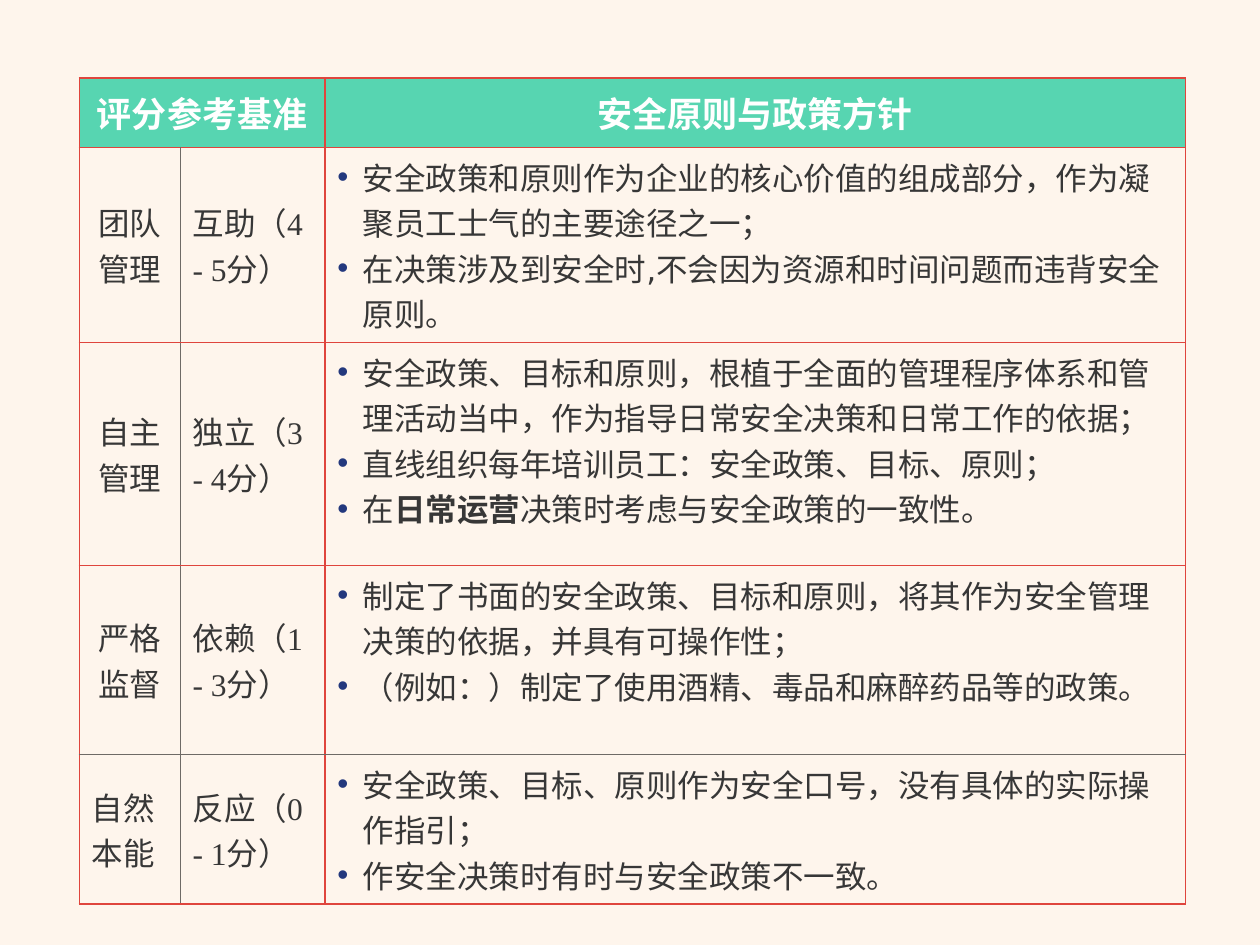
from lxml import etree
from pptx import Presentation
from pptx import util as u
from pptx.dml import color
from pptx.enum import text
from pptx.oxml import ns

BACKGROUND, GREEN, RED, GREY = "FEF5EC", "57D5B1", "DF453D", "6E6A66"
WHITE, INK, NAVY = "FFFFFF", "373737", "23387D"
SANS, SERIF, HAN = "DejaVu Sans", "Times New Roman", "Noto Sans CJK SC"
COLUMNS = [2.03, 2.92, 17.35]
ROWS = [1.4, 3.63, 4.5, 3.81, 2.79]
HEADINGS = {0: "评分参考基准", 2: "安全原则与政策方针"}
LEVELS = [
    ("团队管理", "互助（4 - 5分）", [
        ["安全政策和原则作为企业的核心价值的组成部分，作为凝聚员工士气的主要途径之一；"],
        ["在决策涉及到安全时,不会因为资源和时间问题而违背安全原则。"]]),
    ("自主管理", "独立（3 - 4分）", [
        ["安全政策、目标和原则，根植于全面的管理程序体系和管理活动当中，作为指导日常安全决策和日常工作的依据；"],
        ["直线组织每年培训员工：安全政策、目标、原则；"],
        ["在", "日常运营", "决策时考虑与安全政策的一致性。"]]),
    ("严格监督", "依赖（1 - 3分）", [
        ["制定了书面的安全政策、目标和原则，将其作为安全管理决策的依据，并具有可操作性；"],
        ["（例如：）制定了使用酒精、毒品和麻醉药品等的政策。"]]),
    ("自然本能", "反应（0 - 1分）", [
        ["安全政策、目标、原则作为安全口号，没有具体的实际操作指引；"],
        ["作安全决策时有时与安全政策不一致。"]]),
]


def paint(target, value):
    """Give a fill one solid colour."""
    target.solid()
    target.fore_color.rgb = color.RGBColor.from_string(value)


def add_child(parent, tag, **attributes):
    """Append a drawing element and return it."""
    return etree.SubElement(parent, ns.qn(tag), attributes)


def add_span(para, words, font, size=18, ink=INK, bold=False):
    """Add one run with its Latin and East Asian fonts."""
    span = para.add_run()
    span.text = words
    span.font.name, span.font.size, span.font.bold = font, u.Pt(size), bold
    paint(span.font.fill, ink)
    add_child(span.font._element, "a:ea", typeface=HAN)


def set_bullet(para):
    """Hang a paragraph behind a navy bullet."""
    properties = para._p.get_or_add_pPr()
    properties.set("marL", str(u.Cm(0.51)))
    properties.set("indent", str(u.Cm(-0.51)))
    add_child(add_child(properties, "a:buClr"), "a:srgbClr", val=NAVY)
    add_child(properties, "a:buFont", typeface="Arial")
    add_child(properties, "a:buChar", char="•")


def set_borders(cell, row, column):
    """Draw red cell borders, with thin grey ones inside the grid."""
    grey_sides = {
        "L": row > 0 and column == 1,
        "R": row > 0 and column == 0,
        "T": row == len(ROWS) - 1,
        "B": row == len(ROWS) - 2,
    }
    properties = cell._tc.get_or_add_tcPr()
    for side, grey in grey_sides.items():
        width = u.Pt(0.5 if grey else 1)
        line = add_child(properties, f"a:ln{side}", w=str(width))
        fill = add_child(line, "a:solidFill")
        add_child(fill, "a:srgbClr", val=GREY if grey else RED)


def fill_header(table):
    """Write the heading row."""
    table.cell(0, 0).merge(table.cell(0, 1))
    for column, words in HEADINGS.items():
        para = table.cell(0, column).text_frame.paragraphs[0]
        para.alignment = text.PP_ALIGN.CENTER
        add_span(para, words, HAN, 20, WHITE, True)


def fill_level(table, row, name, score, points):
    """Write one level: its name, its score and its bulleted points."""
    for column, words in enumerate((name, score)):
        para = table.cell(row, column).text_frame.paragraphs[0]
        centred = column == 0 and row < len(LEVELS)
        para.alignment = text.PP_ALIGN.CENTER if centred else text.PP_ALIGN.LEFT
        add_span(para, words, SERIF)
    frame = table.cell(row, 2).text_frame
    for index, spans in enumerate(points):
        para = frame.add_paragraph() if index else frame.paragraphs[0]
        set_bullet(para)
        for position, words in enumerate(spans):
            add_span(para, words, SANS, bold=position == 1)


def add_score_table(page, left, top):
    """Place the scoring table with its corner at the given point."""
    box = page.shapes.add_table(
        len(ROWS), len(COLUMNS), u.Cm(left), u.Cm(top),
        u.Cm(sum(COLUMNS)), u.Cm(sum(ROWS)))
    table = box.table
    for column, width in zip(table.columns, COLUMNS):
        column.width = u.Cm(width)
    for row, height in zip(table.rows, ROWS):
        row.height = u.Cm(height)
    for row in range(len(ROWS)):
        for column in range(len(COLUMNS)):
            cell = table.cell(row, column)
            set_borders(cell, row, column)
            if row == 0:
                paint(cell.fill, GREEN)
            else:
                cell.fill.background()
            if row == 0 or column < 2:
                cell.vertical_anchor = text.MSO_ANCHOR.MIDDLE
    fill_header(table)
    for row, level in enumerate(LEVELS, 1):
        fill_level(table, row, *level)


def main():
    """Build and save the deck."""
    deck = Presentation()
    deck.slide_width, deck.slide_height = u.Cm(25.4), u.Cm(19.05)
    page = deck.slides.add_slide(deck.slide_layouts[6])
    paint(page.background.fill, BACKGROUND)
    add_score_table(page, 1.6, 1.57)
    deck.save("out.pptx")


if __name__ == "__main__":
    main()
